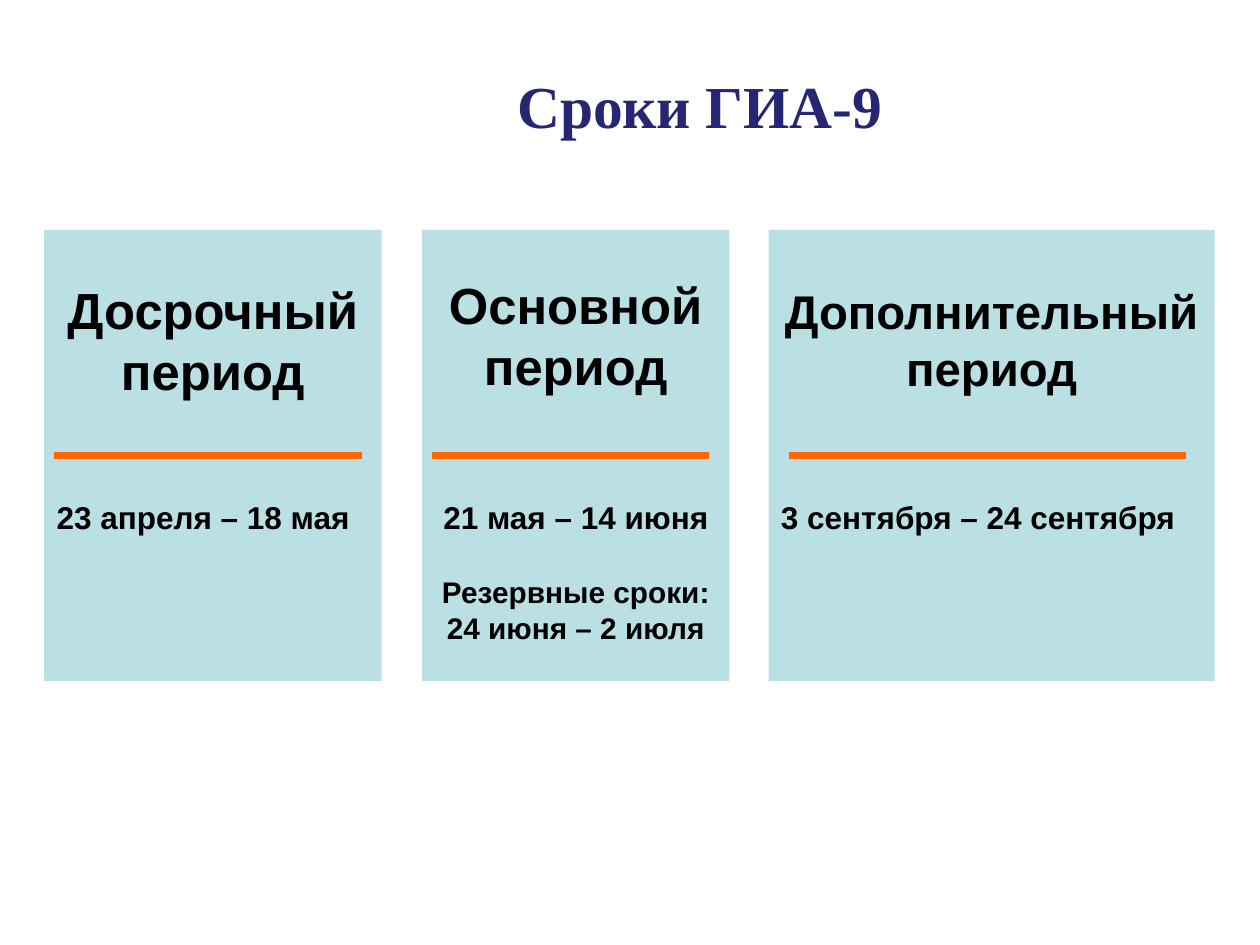
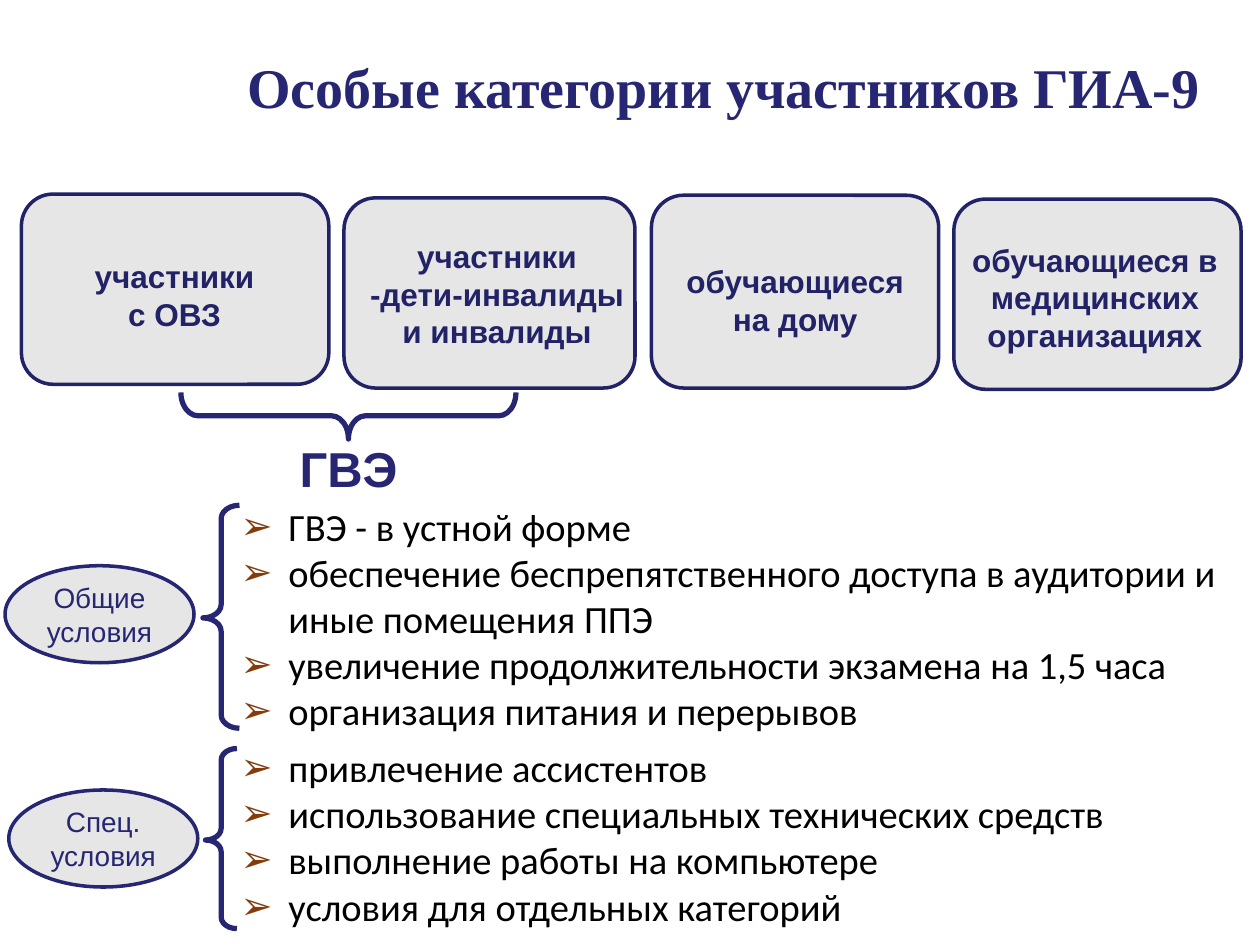
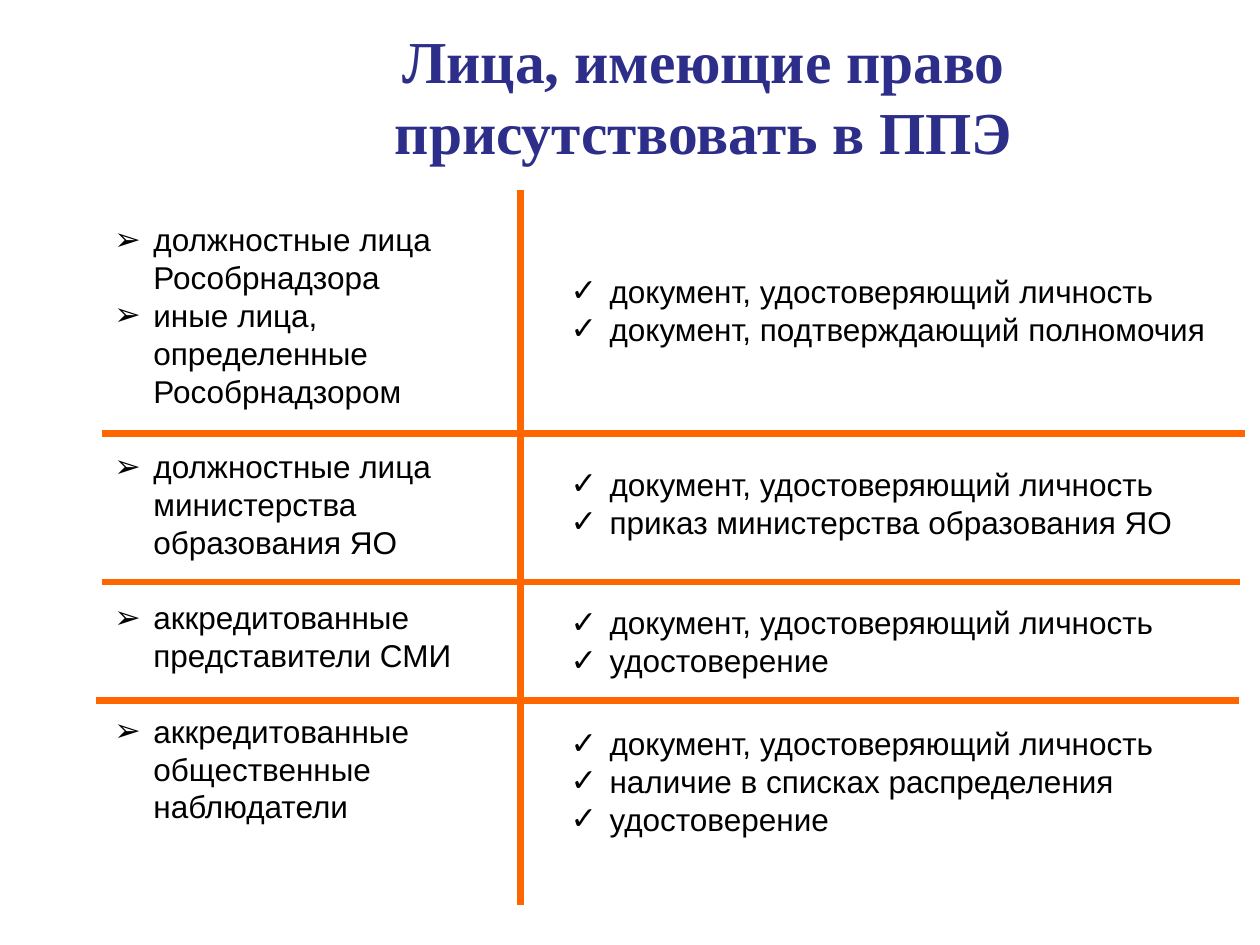
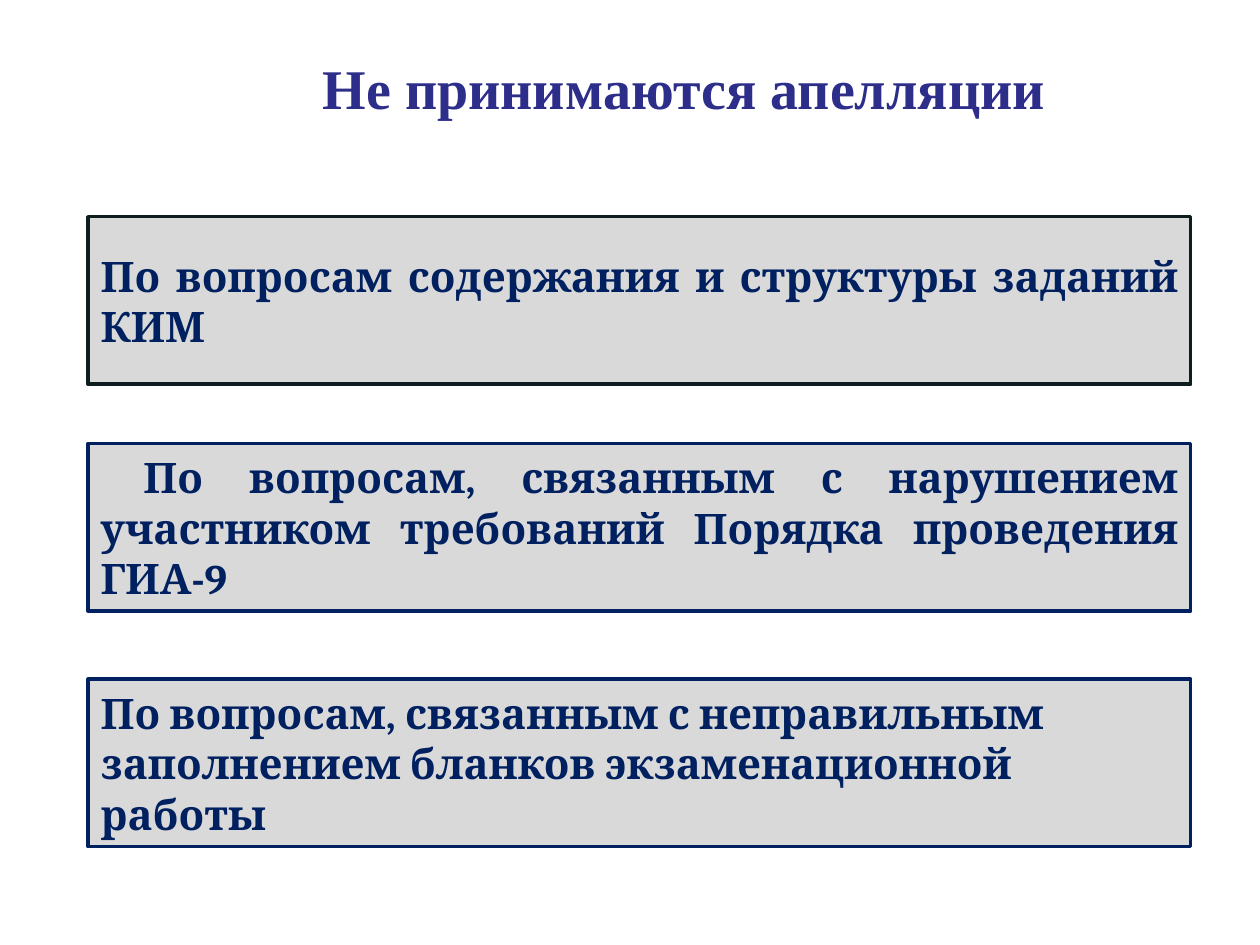
import pptx
import pptx.util
import pptx.dml.color
import pptx.enum.shapes
import pptx.enum.text
import pptx.oxml
import pptx.oxml.ns
from lxml import etree

COLORS = {
    "title": "262673", "title_light": "2D2D8A", "navy": "222267",
    "deep": "002060", "dark": "0E1E20", "text": "000000",
    "orange": "FF6600", "card": "BBE0E3", "soft": "E6E6E6",
    "panel": "D9D9D9", "bullet": "843C0B",
}
SHAPE = pptx.enum.shapes.MSO_SHAPE
ALIGN = pptx.enum.text.PP_ALIGN
ANCHOR = pptx.enum.text.MSO_ANCHOR
Pt = pptx.util.Pt

prs = pptx.Presentation()
prs.slide_width = pptx.util.Inches(10)
prs.slide_height = pptx.util.Inches(7.5)
# Grid: 100 columns by 75 rows
COL = prs.slide_width / 100
ROW = prs.slide_height / 75
BLANK_LINE = 21.6


def rgb(name):
    return pptx.dml.color.RGBColor.from_string(COLORS[name])


def place(x, y, w, h):
    return round(x * COL), round(y * ROW), round(w * COL), round(h * ROW)


def write(tf, paragraphs, size, color="text", font="Arial", bold=False, align=ALIGN.LEFT):
    tf.word_wrap = True
    for i, text in enumerate(paragraphs):
        p = tf.paragraphs[0] if i == 0 else tf.add_paragraph()
        p.text = text
        p.alignment = align
        for r in p.runs:
            r.font.size = Pt(size)
            r.font.name = font
            r.font.bold = bold
            r.font.color.rgb = rgb(color)


def add_text(s, box, paragraphs, size, **style):
    tf = s.shapes.add_textbox(*place(*box)).text_frame
    write(tf, paragraphs, size, **style)
    tf.auto_size = pptx.enum.text.MSO_AUTO_SIZE.SHAPE_TO_FIT_TEXT
    return tf


def add_shape(s, kind, box, fill=None, line=None, width=2):
    sp = s.shapes.add_shape(kind, *place(*box))
    sp.shadow.inherit = False
    if fill:
        sp.fill.solid()
        sp.fill.fore_color.rgb = rgb(fill)
    else:
        sp.fill.background()
    if line:
        sp.line.color.rgb = rgb(line)
        sp.line.width = Pt(width)
    else:
        sp.line.fill.background()
    return sp


def add_rule(s, x1, y1, x2, y2, width=3.75):
    start, end = place(x1, y1, 0, 0)[:2], place(x2, y2, 0, 0)[:2]
    line = s.shapes.add_connector(pptx.enum.shapes.MSO_CONNECTOR.STRAIGHT, *start, *end)
    line.line.color.rgb = rgb("orange")
    line.line.width = Pt(width)
    etree.SubElement(line._element.spPr, pptx.oxml.ns.qn("a:effectLst"))


def add_bullets(tf, char, indent, color="text"):
    for p in tf.paragraphs:
        pPr = p._p.get_or_add_pPr()
        pPr.set("marL", str(round(indent * COL)))
        pPr.set("indent", str(-round(indent * COL)))
        clr = etree.SubElement(pPr, pptx.oxml.ns.qn("a:buClr"))
        etree.SubElement(clr, pptx.oxml.ns.qn("a:srgbClr"), val=COLORS[color])
        etree.SubElement(pPr, pptx.oxml.ns.qn("a:buFont"), typeface="Arial")
        etree.SubElement(pPr, pptx.oxml.ns.qn("a:buChar"), char=char)


def add_text_shadow(r):
    effects = pptx.oxml.parse_xml(
        '<a:effectLst xmlns:a="http://schemas.openxmlformats.org/drawingml/2006/main">'
        '<a:outerShdw blurRad="38100" dist="38100" dir="2700000" algn="tl">'
        '<a:srgbClr val="000000"><a:alpha val="43000"/></a:srgbClr>'
        '</a:outerShdw></a:effectLst>')
    r.font._element.find(pptx.oxml.ns.qn("a:solidFill")).addnext(effects)


def new_slide(title, box, size, color):
    s = prs.slides.add_slide(prs.slide_layouts[6])
    tf = add_text(s, box, [title], size, color=color, font="Times New Roman",
                  bold=True, align=ALIGN.CENTER)
    tf.auto_size = pptx.enum.text.MSO_AUTO_SIZE.NONE
    tf.vertical_anchor = ANCHOR.MIDDLE
    return s


# Slide 1: exam periods
def period_card(s, box, heading, size, head_top, dates, reserve=(), inset=(0.8, 1.6)):
    x, y, w, h = box
    add_shape(s, SHAPE.RECTANGLE, box, "card")
    add_text(s, (x, y + head_top, w, 11), [heading], size, bold=True, align=ALIGN.CENTER)
    add_rule(s, x + inset[0], y + 17.9, x + w - inset[1], y + 17.9, 4)
    align = ALIGN.CENTER if reserve else ALIGN.LEFT
    tf = add_text(s, (x, y + 20.8, w, 12.8 if reserve else 4), [dates, *reserve], 18,
                  bold=True, align=align)
    for p in tf.paragraphs[1:]:
        p.runs[0].font.size = Pt(17)
    if reserve:
        tf.paragraphs[1].space_before = Pt(BLANK_LINE)


def periods_slide():
    s = new_slide("Сроки ГИА-9", (21.7, 3.6, 67.7, 9.4), 34, "title")
    top, height = 18.25, 35.8
    period_card(s, (3.5, top, 26.8, height), "Досрочный период", 29, 3.4, "23 апреля – 18 мая")
    period_card(s, (33.5, top, 24.4, height), "Основной период", 29, 3, "21 мая – 14 июня",
                ["Резервные сроки:", "24 июня – 2 июля"])
    period_card(s, (61, top, 35.4, height), "Дополнительный период", 27, 3.7,
                "3 сентября – 24 сентября", inset=(1.6, 2.3))


# Slide 2: special categories
def category_card(s, box, label_box, lines):
    add_shape(s, SHAPE.ROUNDED_RECTANGLE, box, "soft", "navy")
    dx, dy, w, h = label_box
    add_text(s, (box[0] + dx, box[1] + dy, w, h), lines, 18, color="navy",
             bold=True, align=ALIGN.CENTER)


def add_brace(s, box, rotation, middle=0.5):
    sp = add_shape(s, SHAPE.RIGHT_BRACE, box, line="title", width=3)
    sp.rotation = rotation
    sp.adjustments[0] = 0.366
    sp.adjustments[1] = middle


def condition_group(s, oval_xy, label, brace_box, middle):
    sp = add_shape(s, SHAPE.OVAL, (*oval_xy, 15, 7.7), "soft", "title")
    write(sp.text_frame, [label], 16, color="title", align=ALIGN.CENTER)
    sp.text_frame.vertical_anchor = ANCHOR.MIDDLE
    add_brace(s, brace_box, 180, middle)


def categories_slide():
    s = new_slide("Особые категории участников ГИА-9", (17.7, 3.6, 79.5, 6.4), 32, "title")
    category_card(s, (1.7, 15.4, 24.4, 15.1), (0.6, 4.5, 23.1, 7.1), ["участники\vс ОВЗ"])
    category_card(s, (27.3, 15.7, 23.1, 15.1), (1, 2.6, 22.3, 10.1),
                  ["участники -дети-инвалиды и инвалиды"])
    category_card(s, (51.7, 15.5, 22.8, 15.3), (-0.5, 4.8, 23.8, 7.1),
                  ["обучающиеся", "на дому"])
    category_card(s, (75.7, 15.8, 22.8, 15.1), (-0.8, 2.8, 24, 10.1),
                  ["обучающиеся в медицинских организациях"])

    # Conditions list
    tf = add_text(s, (18.1, 39.4, 80.5, 35.2), [
        "ГВЭ - в устной форме",
        "обеспечение беспрепятственного доступа в аудитории и иные помещения ППЭ",
        "увеличение продолжительности экзамена на 1,5 часа",
        "организация питания и перерывов",
        "привлечение ассистентов",
        "использование специальных технических средств",
        "выполнение работы на компьютере",
        "условия для отдельных категорий",
    ], 22, font="Calibri")
    add_bullets(tf, "➢", 3.8, "bullet")
    tf.paragraphs[3].space_after = Pt(6)

    # Exam form under the first two categories
    add_brace(s, (25.8, 19.7, 3.7, 26.6), 90)
    sp = add_shape(s, SHAPE.OVAL, (20.5, 34.2, 15.7, 5.9))
    write(sp.text_frame, ["ГВЭ"], 28, color="title", bold=True)
    sp.text_frame.vertical_anchor = ANCHOR.MIDDLE
    add_text_shadow(sp.text_frame.paragraphs[0].runs[0])

    condition_group(s, (0.4, 44.9), "Общие условия", (16.1, 40.1, 2.9, 17.7), 0.495)
    condition_group(s, (0.7, 62.7), "Спец. условия", (16.3, 59.4, 2.5, 14.3), 0.492)


# Slide 3: people and their documents
def people_column(s, box, groups):
    tf = add_text(s, box, [person for group in groups for person in group], 18)
    add_bullets(tf, "➢", 3.1)
    first = 0
    for group in groups[:-1]:
        first += len(group)
        tf.paragraphs[first].space_before = Pt(BLANK_LINE)


def documents_cell(s, x, y, extra):
    documents = ["документ, удостоверяющий личность", *extra]
    tf = add_text(s, (x, y, 53.9, 1 + 3.05 * len(documents)), documents, 18)
    add_bullets(tf, "✓", 3.1)


def access_slide():
    s = new_slide("Лица, имеющие право присутствовать в ППЭ", (21.7, 1.3, 68.3, 12.5),
                  34, "title_light")
    add_rule(s, 41.3, 15.1, 41.3, 71.8)
    for left, right, y in [(8.1, 98.8, 34.4), (8.1, 98.4, 46.2), (7.6, 98.3, 55.6)]:
        add_rule(s, right, y, left, y)
    people_column(s, (8.1, 17, 34.6, 49.5), [
        ["должностные лица Рособрнадзора", "иные лица, определенные Рособрнадзором"],
        ["должностные лица министерства образования ЯО"],
        ["аккредитованные представители СМИ"],
        ["аккредитованные общественные наблюдатели"],
    ])
    for y, extra in [
        (21.1, ["документ, подтверждающий полномочия"]),
        (36.4, ["приказ министерства образования ЯО"]),
        (47.4, ["удостоверение"]),
        (57, ["наличие в списках распределения", "удостоверение"]),
    ]:
        documents_cell(s, 44.3, y, extra)


# Slide 4: appeals that are not accepted
def appeal_panel(s, y, text, line, align, indent=0):
    sp = add_shape(s, SHAPE.RECTANGLE, (7, y, 87.5, 13.3), "panel", line)
    tf = sp.text_frame
    write(tf, [text], 24, color="deep", font="Cambria", bold=True, align=align)
    tf.vertical_anchor = ANCHOR.MIDDLE
    if indent:
        tf.paragraphs[0]._p.get_or_add_pPr().set("indent", str(round(indent * COL)))


def appeals_slide():
    s = new_slide("Не принимаются апелляции", (4.3, 3.6, 100, 6.7), 32, "title_light")
    appeal_panel(s, 17.2, "По вопросам содержания и структуры заданий КИМ",
                 "dark", ALIGN.JUSTIFY)
    appeal_panel(s, 35.2, "По вопросам, связанным с нарушением участником требований "
                 "Порядка проведения ГИА-9", "deep", ALIGN.JUSTIFY, 3.4)
    appeal_panel(s, 53.9, "По вопросам, связанным с неправильным заполнением бланков "
                 "экзаменационной работы", "deep", ALIGN.LEFT)


def main():
    periods_slide()
    categories_slide()
    access_slide()
    appeals_slide()
    prs.save("out.pptx")


if __name__ == "__main__":
    main()
